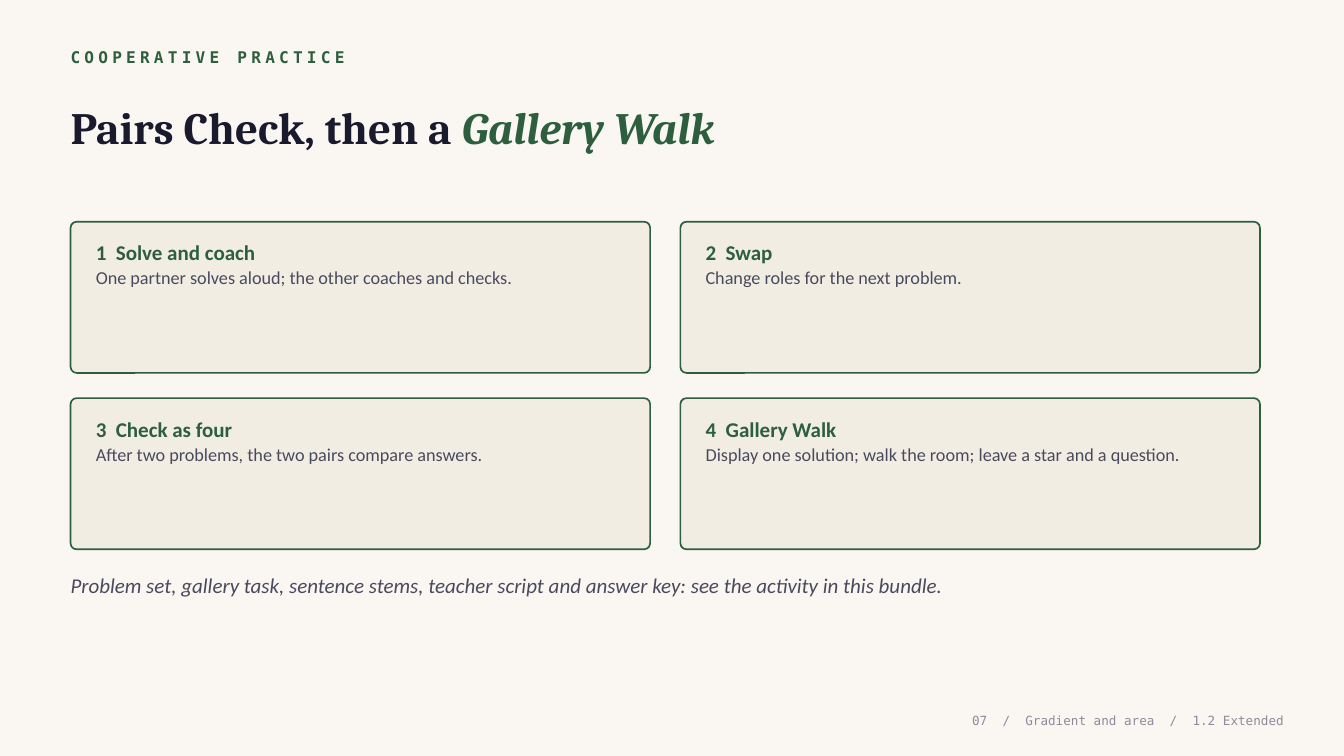
from dataclasses import dataclass

from pptx import Presentation
from pptx.dml.color import RGBColor
from pptx.enum.shapes import MSO_SHAPE
from pptx.enum.text import MSO_ANCHOR, MSO_AUTO_SIZE, PP_ALIGN
from pptx.slide import Slide
from pptx.text.text import TextFrame
from pptx.util import Pt

CREAM = RGBColor(0xFA, 0xF7, 0xF2)
SAND = RGBColor(0xF2, 0xED, 0xE3)
GREEN = RGBColor(0x2D, 0x5F, 0x3F)
INK = RGBColor(0x1A, 0x1A, 0x2E)
SLATE = RGBColor(0x4A, 0x4A, 0x5E)
GREY = RGBColor(0x8B, 0x8B, 0x9C)

SERIF, SANS, MONO = "Cambria", "Calibri", "DejaVu Sans Mono"

MARGIN = 50.4
CONTENT_WIDTH = 858.96
CARD_WIDTH, CARD_HEIGHT = 414, 108
CARD_TOP = 158.4
COLUMN_STEP, ROW_STEP = 435.6, 126
PAD_X, PAD_Y = 18, 11.52


@dataclass(frozen=True)
class Box:
    left: float
    top: float
    width: float
    height: float

    def lengths(self) -> tuple[Pt, Pt, Pt, Pt]:
        return Pt(self.left), Pt(self.top), Pt(self.width), Pt(self.height)


@dataclass(frozen=True)
class Style:
    face: str
    size: float
    color: RGBColor
    bold: bool = False
    italic: bool = False

    def apply(self, font) -> None:
        font.name = self.face
        font.size = Pt(self.size)
        font.color.rgb = self.color
        font.bold = self.bold
        font.italic = self.italic


@dataclass(frozen=True)
class Step:
    heading: str
    detail: str


STEPS = [
    Step("Solve and coach", "One partner solves aloud; the other coaches and checks."),
    Step("Swap", "Change roles for the next problem."),
    Step("Check as four", "After two problems, the two pairs compare answers."),
    Step("Gallery Walk", "Display one solution; walk the room; leave a star and a question."),
]

EYEBROW = Style(MONO, 11.5, GREEN, bold=True)
TITLE = Style(SERIF, 32, INK, bold=True)
TITLE_ACCENT = Style(SERIF, 32, GREEN, bold=True, italic=True)
HEADING = Style(SANS, 15, GREEN, bold=True)
DETAIL = Style(SANS, 13, SLATE)
NOTE = Style(SANS, 15, SLATE, italic=True)
FOOTER = Style(MONO, 9, GREY)


def prepare_frame(frame: TextFrame, anchor: MSO_ANCHOR) -> None:
    frame.word_wrap = True
    frame.auto_size = MSO_AUTO_SIZE.NONE
    frame.vertical_anchor = anchor
    frame.margin_left = frame.margin_top = frame.margin_right = frame.margin_bottom = 0


def add_text(slide: Slide, box: Box, lines: list[tuple[str, Style]],
             anchor: MSO_ANCHOR = MSO_ANCHOR.MIDDLE,
             align: PP_ALIGN = PP_ALIGN.LEFT) -> TextFrame:
    frame = slide.shapes.add_textbox(*box.lengths()).text_frame
    prepare_frame(frame, anchor)
    for index, (text, style) in enumerate(lines):
        paragraph = frame.add_paragraph() if index else frame.paragraphs[0]
        paragraph.text = text
        paragraph.alignment = align
        style.apply(paragraph.font)
    return frame


def add_title(slide: Slide, box: Box, parts: list[tuple[str, Style]]) -> None:
    title = slide.shapes.title
    title.left, title.top, title.width, title.height = box.lengths()
    prepare_frame(title.text_frame, MSO_ANCHOR.MIDDLE)
    paragraph = title.text_frame.paragraphs[0]
    paragraph.alignment = PP_ALIGN.LEFT
    for text, style in parts:
        run = paragraph.add_run()
        run.text = text
        style.apply(run.font)


def add_step_card(slide: Slide, index: int, step: Step) -> None:
    row, column = divmod(index, 2)
    left = MARGIN + column * COLUMN_STEP
    top = CARD_TOP + row * ROW_STEP
    card = slide.shapes.add_shape(
        MSO_SHAPE.ROUNDED_RECTANGLE, *Box(left, top, CARD_WIDTH, CARD_HEIGHT).lengths())
    card.adjustments[0] = 0.04
    card.shadow.inherit = False
    card.fill.solid()
    card.fill.fore_color.rgb = SAND
    card.line.color.rgb = GREEN
    card.line.width = Pt(1.2)

    inner = Box(left + PAD_X, top + PAD_Y, CARD_WIDTH - 2 * PAD_X, 86.4)
    lines = [(f"{index + 1}  {step.heading}", HEADING), (step.detail, DETAIL)]
    for paragraph in add_text(slide, inner, lines, MSO_ANCHOR.TOP).paragraphs:
        paragraph.line_spacing = 1.08


def main() -> None:
    deck = Presentation()
    deck.slide_width, deck.slide_height = Pt(960), Pt(540)
    slide = deck.slides.add_slide(deck.slide_layouts[5])
    slide.background.fill.solid()
    slide.background.fill.fore_color.rgb = CREAM

    eyebrow = add_text(slide, Box(MARGIN, 30.24, CONTENT_WIDTH, 21.6),
                       [("COOPERATIVE PRACTICE", EYEBROW)])
    eyebrow.paragraphs[0].runs[0]._r.get_or_add_rPr().set("spc", "300")
    add_title(slide, Box(MARGIN, 56.16, CONTENT_WIDTH, 68.4),
              [("Pairs Check, then a ", TITLE), ("Gallery Walk", TITLE_ACCENT)])

    for index, step in enumerate(STEPS):
        add_step_card(slide, index, step)

    add_text(slide, Box(MARGIN, 399.6, CONTENT_WIDTH, 36),
             [("Problem set, gallery task, sentence stems, teacher script and answer key: "
               "see the activity in this bundle.", NOTE)])
    add_text(slide, Box(599.76, 504, 316.8, 21.6),
             [("07  /  Gradient and area  /  1.2 Extended", FOOTER)], align=PP_ALIGN.RIGHT)
    deck.save("out.pptx")


if __name__ == "__main__":
    main()
